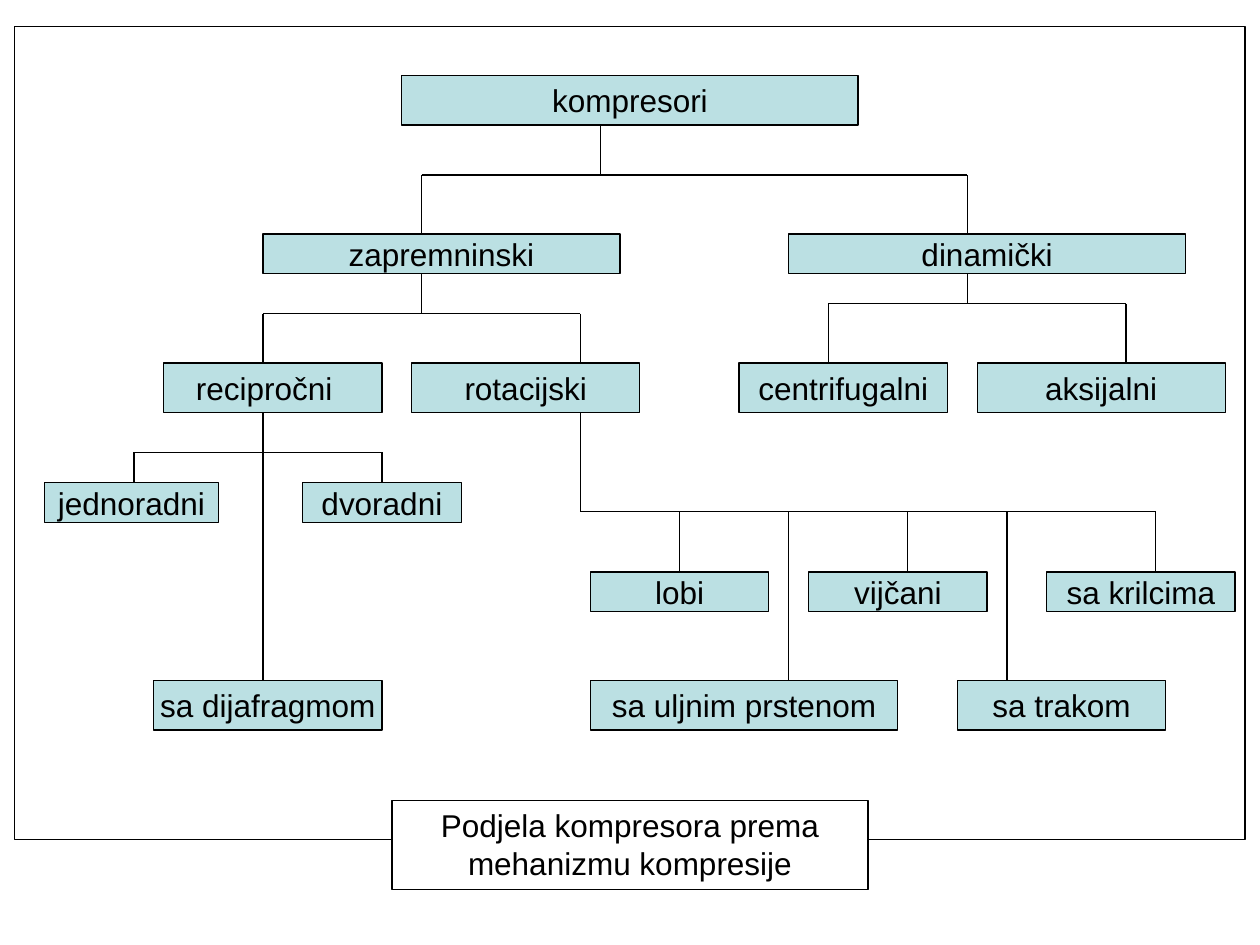
from lxml.etree import SubElement
from pptx import Presentation
from pptx.dml.color import RGBColor
from pptx.enum.shapes import MSO_CONNECTOR as CONN, MSO_SHAPE as SHAPE
from pptx.enum.text import MSO_ANCHOR as ANCHOR, MSO_AUTO_SIZE as AUTO, PP_ALIGN as ALIGN
from pptx.oxml.ns import qn
from pptx.util import Cm, Pt

BLACK = RGBColor(0x00, 0x00, 0x00)
WHITE = RGBColor(0xFF, 0xFF, 0xFF)
TEAL = RGBColor(0xBB, 0xE0, 0xE3)

FONT = {"name": "Arial", "size": Pt(18), "bold": False}
CENTRED = {"vertical_anchor": ANCHOR.MIDDLE, "word_wrap": False}
TOP = {"vertical_anchor": ANCHOR.TOP, "word_wrap": True, "auto_size": AUTO.NONE}

# Rows of boxes in cm: top, height, then (text, left, width)
ROWS = [
    (1.52, 1.0, [("kompresori", 8.1, 9.2)]),
    (4.72, 0.8, [("zapremninski", 5.3, 7.2), ("dinamički", 15.9, 8.0)]),
    (7.32, 1.0, [("recipročni", 3.3, 4.4), ("rotacijski", 8.3, 4.6),
                 ("centrifugalni", 14.9, 4.2), ("aksijalni", 19.7, 5.0)]),
    (9.73, 0.8, [("jednoradni", 0.9, 3.5), ("dvoradni", 6.1, 3.2)]),
    (11.53, 0.8, [("lobi", 11.9, 3.6), ("vijčani", 16.3, 3.6),
                  ("sa krilcima", 21.1, 3.8)]),
    (13.72, 1.0, [("sa dijafragmom", 3.1, 4.6), ("sa uljnim prstenom", 11.9, 6.2),
                  ("sa trakom", 19.3, 4.2)]),
]

# Branches in cm: parent, stem x, height of the crossbar, {child: drop x}
BRANCHES = [
    ("kompresori", 12.1, 3.53, {"zapremninski": 8.5, "dinamički": 19.5}),
    ("zapremninski", 8.5, 6.32, {"recipročni": 5.3, "rotacijski": 11.7}),
    ("dinamički", 19.5, 6.12, {"centrifugalni": 16.7, "aksijalni": 22.7}),
    ("recipročni", 5.3, 9.12, {"jednoradni": 2.7, "sa dijafragmom": 5.3,
                               "dvoradni": 7.7}),
    ("rotacijski", 11.7, 10.31, {"lobi": 13.7, "sa uljnim prstenom": 15.9,
                                 "vijčani": 18.3, "sa trakom": 20.3,
                                 "sa krilcima": 23.3}),
]


def set_attrs(obj, values):
    for name, value in values.items():
        setattr(obj, name, value)


def write(sp, text, frame, align):
    tf = sp.text_frame
    set_attrs(tf, frame)
    p = tf.paragraphs[0]
    p.alignment = align
    r = p.add_run()
    r.text = text
    set_attrs(r.font, FONT)
    r.font.color.rgb = BLACK


def paint(sp, fill):
    if fill is None:
        sp.fill.background()
    else:
        sp.fill.solid()
        sp.fill.fore_color.rgb = fill
    sp.line.color.rgb = BLACK
    sp.line.width = Pt(0.75)


def add_box(s, left, top, width, height, fill=None):
    sp = s.shapes.add_shape(SHAPE.RECTANGLE, Cm(left), Cm(top), Cm(width), Cm(height))
    sp.shadow.inherit = False
    paint(sp, fill)
    return sp


def add_line(s, x1, y1, x2, y2):
    line = s.shapes.add_connector(CONN.STRAIGHT, x1, y1, x2, y2)
    line.line.color.rgb = BLACK
    line.line.width = Pt(0.75)
    SubElement(line._element.spPr, qn("a:effectLst"))
    return line


def add_branch(s, boxes, parent, stem, bar, drops):
    sp, x, y = boxes[parent], Cm(stem), Cm(bar)
    add_line(s, x, sp.top + sp.height, x, y)
    ends = [stem, *drops.values()]
    add_line(s, Cm(min(ends)), y, Cm(max(ends)), y)
    for child, drop in drops.items():
        sp, x = boxes[child], Cm(drop)
        line = add_line(s, x, y, x, sp.top)
        # Join the drop where it meets the middle of the top side
        if abs(sp.left + sp.width // 2 - x) < Cm(0.02):
            line.end_connect(sp, 0)


def add_caption(s, text):
    sp = s.shapes.title
    set_attrs(sp, {"left": Cm(7.9), "top": Cm(16.13), "width": Cm(9.6), "height": Cm(1.8)})
    paint(sp, WHITE)
    write(sp, text, TOP, ALIGN.CENTER)
    # Bring the caption in front of the frame
    s.shapes._spTree.append(sp._element)


def main():
    prs = Presentation()
    prs.slide_width, prs.slide_height = Cm(25.4), Cm(19.05)
    s = prs.slides.add_slide(prs.slide_layouts[5])

    # Outer frame
    add_box(s, 0.3, 0.53, 24.8, 16.4)

    # Boxes of the tree
    boxes = {}
    for top, height, row in ROWS:
        for text, left, width in row:
            boxes[text] = add_box(s, left, top, width, height, TEAL)
            if text != "recipročni":
                write(boxes[text], text, CENTRED, ALIGN.CENTER)

    # This label stands left of the middle of its box
    label = s.shapes.add_textbox(Cm(3.7), Cm(7.32), Cm(3.6), Cm(1.02))
    write(label, "recipročni", TOP, ALIGN.LEFT)

    # Lines of the tree
    for branch in BRANCHES:
        add_branch(s, boxes, *branch)

    add_caption(s, "Podjela kompresora prema mehanizmu kompresije")
    prs.save("out.pptx")


if __name__ == "__main__":
    main()
